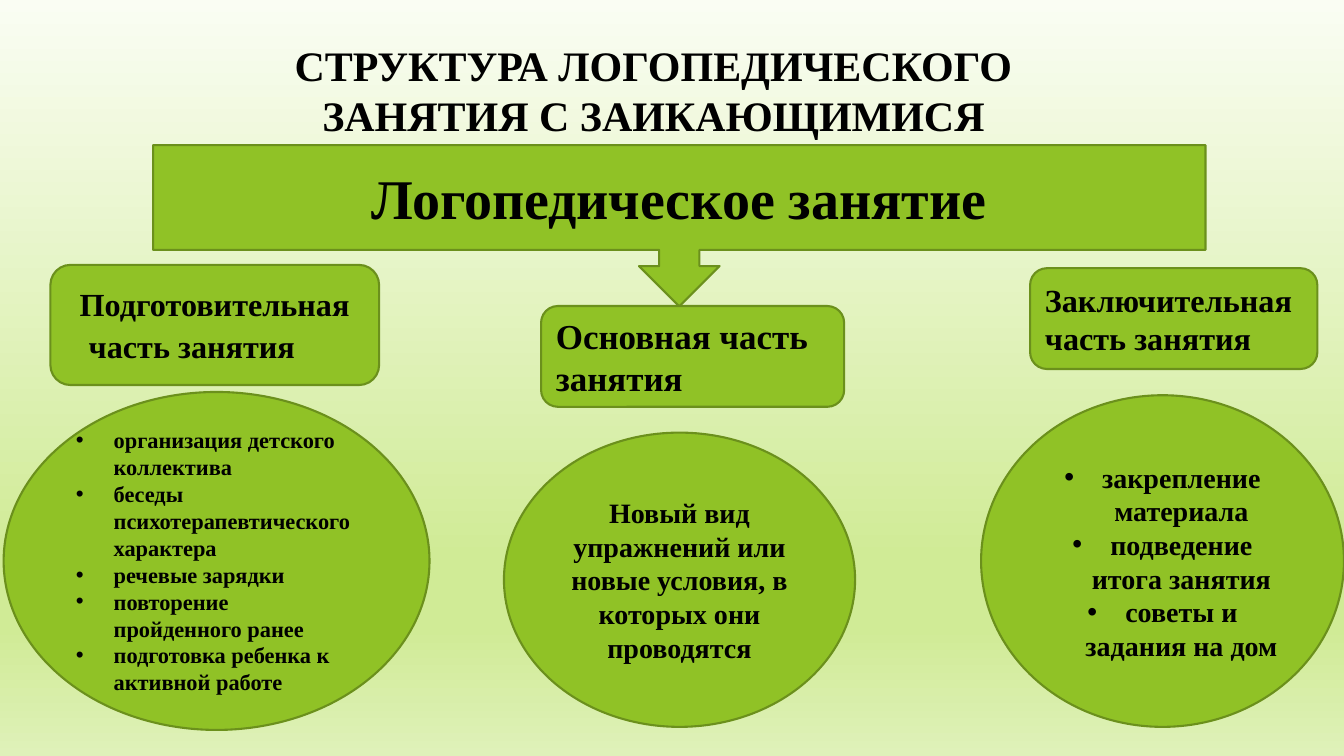
from dataclasses import dataclass

from lxml import etree
from pptx import Presentation
from pptx.dml.color import RGBColor
from pptx.enum import shapes, text
from pptx.oxml import ns
from pptx.util import Pt


@dataclass(frozen=True)
class Theme:
    font: str = "Times New Roman"
    ink: str = "000000"
    fill: str = "90C226"
    edge: str = "6B901C"
    # Background stops: percent and colour
    stops: tuple = ((0, "FAFDF3"), (74, "D0EB96"), (83, "D0EB96"), (100, "DFF1B9"))
    title: float = 30
    banner: float = 40
    head: float = 23
    main: float = 25
    body: float = 20
    small: float = 16


THEME = Theme()
KIND = shapes.MSO_SHAPE
LEFT, CENTER = text.PP_ALIGN.LEFT, text.PP_ALIGN.CENTER
INDENT = Pt(27)

# Each part: heading, its size, alignment and box; then items, size, alignment, bullets and oval
PARTS = (
    (("Подготовительная часть занятия", THEME.head, CENTER, (36, 189.2, 234.8, 85.8)),
     (("организация детского коллектива",
       "беседы психотерапевтического характера",
       "речевые зарядки",
       "повторение пройденного ранее",
       "подготовка ребенка к активной работе"),
      THEME.small, LEFT, True, (2.6, 280, 304.2, 241.4))),
    (("Основная часть занятия", THEME.main, LEFT, (386.5, 218.6, 216.5, 72)),
     (("Новый вид упражнений или новые условия, в которых они проводятся",),
      THEME.body, CENTER, False, (360, 309, 250.8, 210.2))),
    (("Заключительная часть занятия", THEME.head, LEFT, (735.8, 191.6, 205.2, 72)),
     (("закрепление материала", "подведение итога занятия", "советы и задания на дом"),
      THEME.body, CENTER, True, (700.8, 282.3, 259.2, 236.9))),
)


def paint(slide):
    """Fill the background with the vertical gradient."""
    fill = slide.background.fill
    fill.gradient()
    grad = slide.background._cSld.find(".//" + ns.qn("a:gradFill"))
    stops = grad.find(ns.qn("a:gsLst"))
    for stop in list(stops):
        stops.remove(stop)
    for place, color in THEME.stops:
        stop = etree.SubElement(stops, ns.qn("a:gs"), pos=str(place * 1000))
        etree.SubElement(stop, ns.qn("a:srgbClr"), val=color)
    grad.find(ns.qn("a:lin")).set("ang", "5400000")


def style(para, size, align):
    para.alignment = align
    font = para.font
    font.name, font.size, font.bold = THEME.font, Pt(size), True
    font.color.rgb = RGBColor.from_string(THEME.ink)


def bullet(para):
    props = para._p.get_or_add_pPr()
    props.set("marL", str(INDENT))
    props.set("indent", str(-INDENT))
    mark = etree.Element(ns.qn("a:buChar"), char="•")
    face = etree.Element(ns.qn("a:buFont"), typeface="Arial")
    props.insert(0, mark)
    props.insert(0, face)


def write(frame, lines, size, align, marked=False):
    for index, line in enumerate(lines):
        para = frame.add_paragraph() if index else frame.paragraphs[0]
        para.add_run().text = line
        style(para, size, align)
        if marked:
            bullet(para)


def title(slide, words, box):
    shape = slide.shapes.title
    shape.left, shape.top, shape.width, shape.height = map(Pt, box)
    frame = shape.text_frame
    frame.word_wrap = True
    frame.auto_size = text.MSO_AUTO_SIZE.NONE
    frame.vertical_anchor = text.MSO_ANCHOR.BOTTOM
    write(frame, [words], THEME.title, CENTER)


def panel(slide, kind, box, lines, size, align, marked=False):
    """Add a green shape with text and return its text frame."""
    shape = slide.shapes.add_shape(kind, *map(Pt, box))
    shape.shadow.inherit = False
    shape.fill.solid()
    shape.fill.fore_color.rgb = RGBColor.from_string(THEME.fill)
    shape.line.color.rgb = RGBColor.from_string(THEME.edge)
    shape.line.width = Pt(1.5)
    frame = shape.text_frame
    frame.word_wrap = True
    frame.vertical_anchor = text.MSO_ANCHOR.MIDDLE
    write(frame, lines, size, align, marked)
    return frame


def main():
    deck = Presentation()
    deck.slide_width, deck.slide_height = Pt(960), Pt(540)
    slide = deck.slides.add_slide(deck.slide_layouts.get_by_name("Title Only"))
    paint(slide)
    title(slide, "СТРУКТУРА ЛОГОПЕДИЧЕСКОГО ЗАНЯТИЯ С ЗАИКАЮЩИМИСЯ",
          (161.3, 27.4, 611.3, 76.3))
    panel(slide, KIND.DOWN_ARROW_CALLOUT, (109.4, 103.7, 751.7, 115.2),
          ["Логопедическое занятие"], THEME.banner, CENTER)
    for (name, size, align, box), (items, small, side, marked, oval) in PARTS:
        frame = panel(slide, KIND.ROUNDED_RECTANGLE, box, [name], size, align)
        if align == CENTER:
            # The closing tab pushes the last line to the left edge
            tab = frame.paragraphs[0].add_run()
            tab.text = "\t"
            tab.font.size = Pt(THEME.main)
        panel(slide, KIND.OVAL, oval, items, small, side, marked)
    deck.save("out.pptx")


if __name__ == "__main__":
    main()
